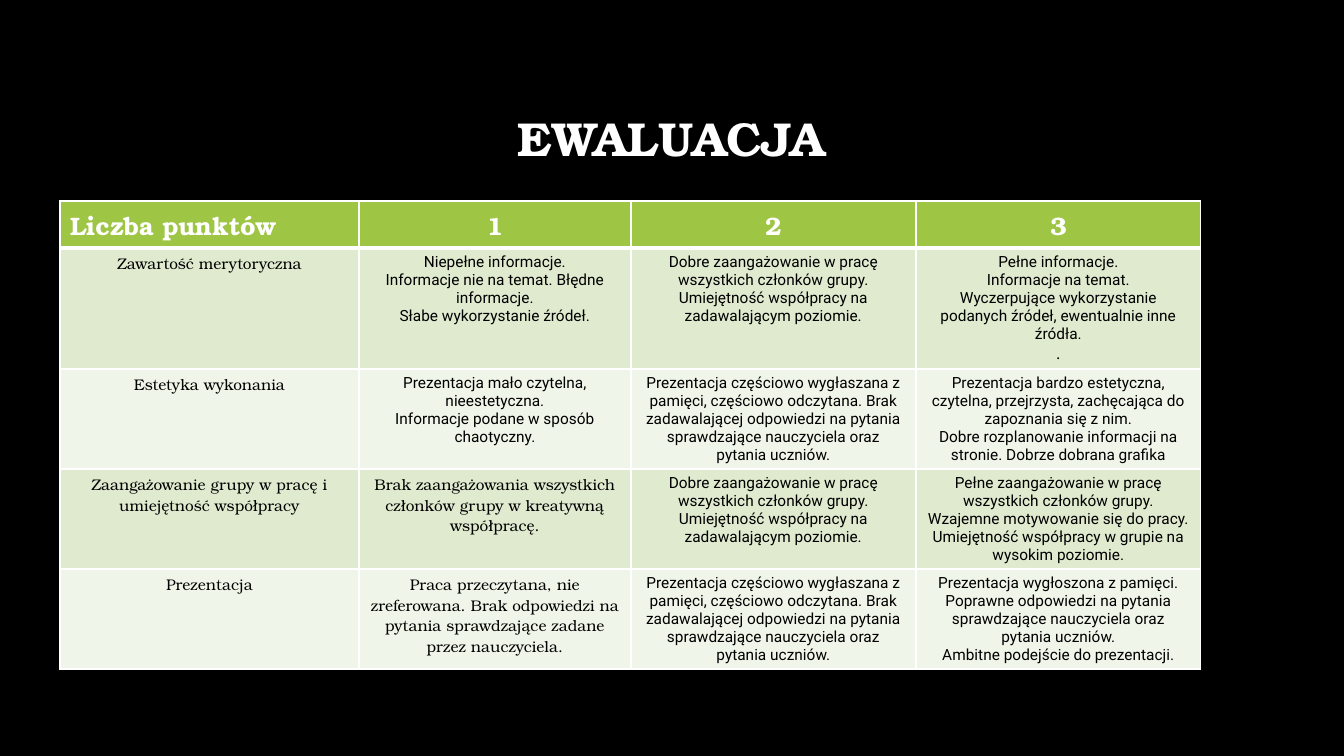
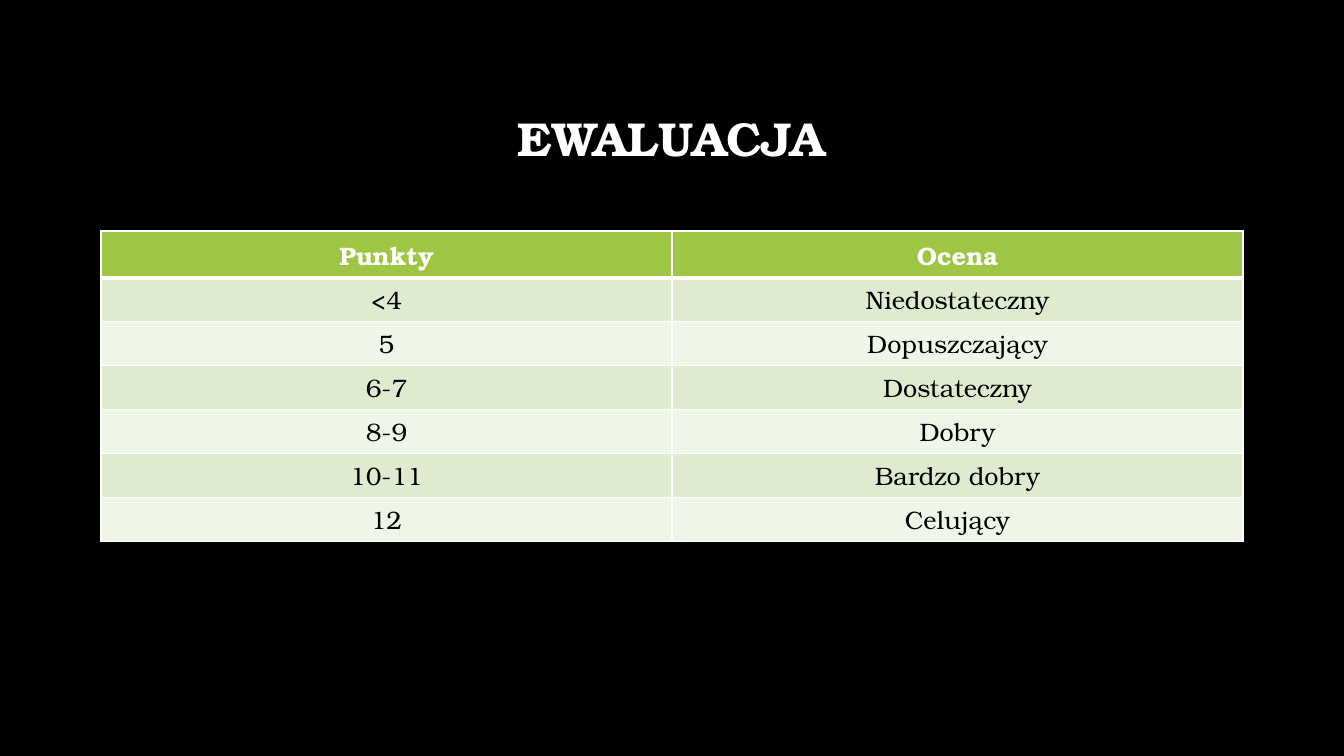
from lxml import etree
from pptx import Presentation
from pptx.dml.color import RGBColor
from pptx.enum.text import MSO_ANCHOR, MSO_AUTO_SIZE, PP_ALIGN
from pptx.oxml.ns import qn
from pptx.util import Emu, Pt

CENTER, LEFT = PP_ALIGN.CENTER, PP_ALIGN.LEFT
MIDDLE = MSO_ANCHOR.MIDDLE
NO_AUTOFIT = MSO_AUTO_SIZE.NONE

# Shared geometry and style
EMU_PER_PX = 12192000 / 1344
SLIDE_SIZE = (1344, 756)
TITLE_BOX = (101, 68, 1141, 146)
HEADER_HEIGHT = 46
TITLE_ONLY = 5
SERIF, SANS = "TeX Gyre Bonum", "Roboto"
BLACK, WHITE = "000000", "FFFFFF"
HEADER_FILL = "9EC544"
BAND_FILLS = ("DFEACF", "F0F5E9")
THIN, THICK = Pt(1), Pt(3)


def px(length):
    return Emu(round(length * EMU_PER_PX))


def color(hex_string):
    return RGBColor.from_string(hex_string)


def serif(*lines):
    return [(line, SERIF) for line in lines]


def sans(*lines):
    return [(line, SANS) for line in lines]


def style_paragraph(paragraph, font_name, size, hex_string, bold, alignment=CENTER):
    paragraph.alignment = alignment
    font = paragraph.font
    font.name, font.size, font.bold = font_name, Pt(size), bold
    font.color.rgb = color(hex_string)


def add_titled_slide(presentation, title):
    slide = presentation.slides.add_slide(presentation.slide_layouts[TITLE_ONLY])
    shape = slide.shapes.title
    shape.left, shape.top, shape.width, shape.height = map(px, TITLE_BOX)
    frame = shape.text_frame
    frame.text = title
    frame.vertical_anchor = MIDDLE
    frame.auto_size = NO_AUTOFIT
    paragraph = frame.paragraphs[0]
    paragraph.line_spacing = 0.9
    style_paragraph(paragraph, SERIF, 34, WHITE, True)
    return slide


def set_borders(cell, top, bottom):
    """Draw white cell borders; they must precede the fill in the XML."""
    properties = cell._tc.get_or_add_tcPr()
    widths = {"a:lnL": THIN, "a:lnR": THIN, "a:lnT": top, "a:lnB": bottom}
    for index, (tag, width) in enumerate(widths.items()):
        line = etree.Element(qn(tag), w=str(width))
        fill = etree.SubElement(line, qn("a:solidFill"))
        etree.SubElement(fill, qn("a:srgbClr"), val=WHITE)
        properties.insert(index, line)


def fill_cell(cell, lines, row, size, alignment):
    is_header = row == 0
    cell.fill.solid()
    cell.fill.fore_color.rgb = color(HEADER_FILL if is_header else BAND_FILLS[(row - 1) % 2])
    set_borders(cell, THICK if row == 1 else THIN, THICK if is_header else THIN)
    cell.text_frame.text = "\n".join(text for text, _ in lines)
    for paragraph, (_, font_name) in zip(cell.text_frame.paragraphs, lines):
        style_paragraph(paragraph, font_name, size, WHITE if is_header else BLACK,
                        is_header, alignment)


def add_banded_table(slide, left, top, column_widths, row_heights, rows, body_size,
                     first_header_alignment=CENTER):
    """Place a table with a green header and alternating body rows."""
    heights = [HEADER_HEIGHT, *row_heights]
    box = (left, top, sum(column_widths), sum(heights))
    table = slide.shapes.add_table(len(rows), len(column_widths), *map(px, box)).table
    table.horz_banding = False
    for column, width in zip(table.columns, column_widths):
        column.width = px(width)
    for row, (cells, height) in enumerate(zip(rows, heights)):
        table.rows[row].height = px(height)
        for column, lines in enumerate(cells):
            alignment = first_header_alignment if row == column == 0 else CENTER
            fill_cell(table.cell(row, column), lines, row, 18 if row == 0 else body_size, alignment)


# Content
GOOD_TEAMWORK = sans("Dobre zaangażowanie w pracę wszystkich członków grupy. "
                     "Umiejętność współpracy na zadawalającym poziomie.")
PARTLY_READ = sans("Prezentacja częściowo wygłaszana z pamięci, częściowo odczytana. "
                   "Brak zadawalającej odpowiedzi na pytania sprawdzające nauczyciela "
                   "oraz pytania uczniów.")
CRITERIA = [
    [serif(text) for text in ("Liczba punktów", "1", "2", "3")],
    [
        serif("Zawartość merytoryczna"),
        sans("Niepełne informacje.", "Informacje nie na temat. Błędne informacje.",
             "Słabe wykorzystanie źródeł."),
        GOOD_TEAMWORK,
        sans("Pełne informacje.", "Informacje na temat.",
             "Wyczerpujące wykorzystanie podanych źródeł, ewentualnie inne źródła.") + serif("."),
    ],
    [
        serif("Estetyka wykonania"),
        sans("Prezentacja mało czytelna, nieestetyczna.",
             "Informacje podane w sposób chaotyczny."),
        PARTLY_READ,
        sans("Prezentacja bardzo estetyczna, czytelna, przejrzysta, zachęcająca do "
             "zapoznania się z nim.",
             "Dobre rozplanowanie informacji na stronie. Dobrze dobrana grafika"),
    ],
    [
        serif("Zaangażowanie grupy w pracę i umiejętność współpracy"),
        serif("Brak zaangażowania wszystkich członków grupy w kreatywną współpracę."),
        GOOD_TEAMWORK,
        sans("Pełne zaangażowanie w pracę wszystkich członków grupy. Wzajemne motywowanie "
             "się do pracy. Umiejętność współpracy w grupie na wysokim poziomie."),
    ],
    [
        serif("Prezentacja"),
        serif("Praca przeczytana, nie zreferowana. Brak odpowiedzi na pytania sprawdzające "
              "zadane przez nauczyciela."),
        PARTLY_READ,
        sans("Prezentacja wygłoszona z pamięci. Poprawne odpowiedzi na pytania sprawdzające "
             "nauczyciela oraz pytania uczniów.", "Ambitne podejście do prezentacji."),
    ],
]
GRADES = [
    ("Punkty", "Ocena"),
    ("<4", "Niedostateczny"),
    ("5", "Dopuszczający"),
    ("6-7", "Dostateczny"),
    ("8-9", "Dobry"),
    ("10-11", "Bardzo dobry"),
    ("12", "Celujący"),
]


def add_criteria_slide(presentation):
    slide = add_titled_slide(presentation, "EWALUACJA")
    add_banded_table(slide, 60, 201, (299, 272, 285, 285), (121, 100, 100, 100),
                     CRITERIA, 11, LEFT)


def add_grades_slide(presentation):
    slide = add_titled_slide(presentation, "EWALUACJA")
    rows = [[serif(text) for text in row] for row in GRADES]
    add_banded_table(slide, 101, 231, (571, 571), [44] * (len(rows) - 1), rows, 18)


def main():
    presentation = Presentation()
    presentation.slide_width, presentation.slide_height = map(px, SLIDE_SIZE)
    background = presentation.slide_master.background.fill
    background.solid()
    background.fore_color.rgb = color(BLACK)
    add_criteria_slide(presentation)
    add_grades_slide(presentation)
    presentation.save("out.pptx")


if __name__ == "__main__":
    main()
